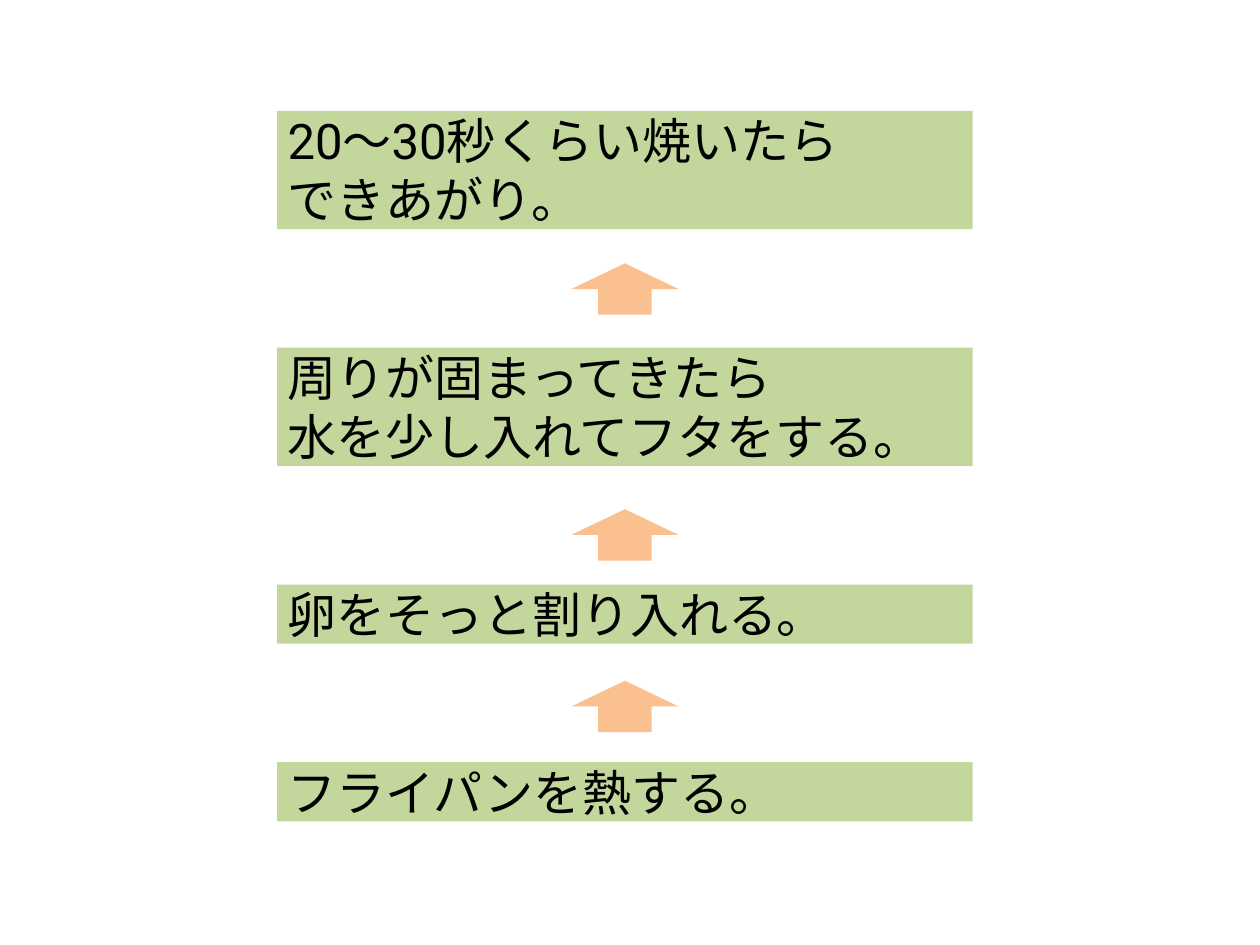
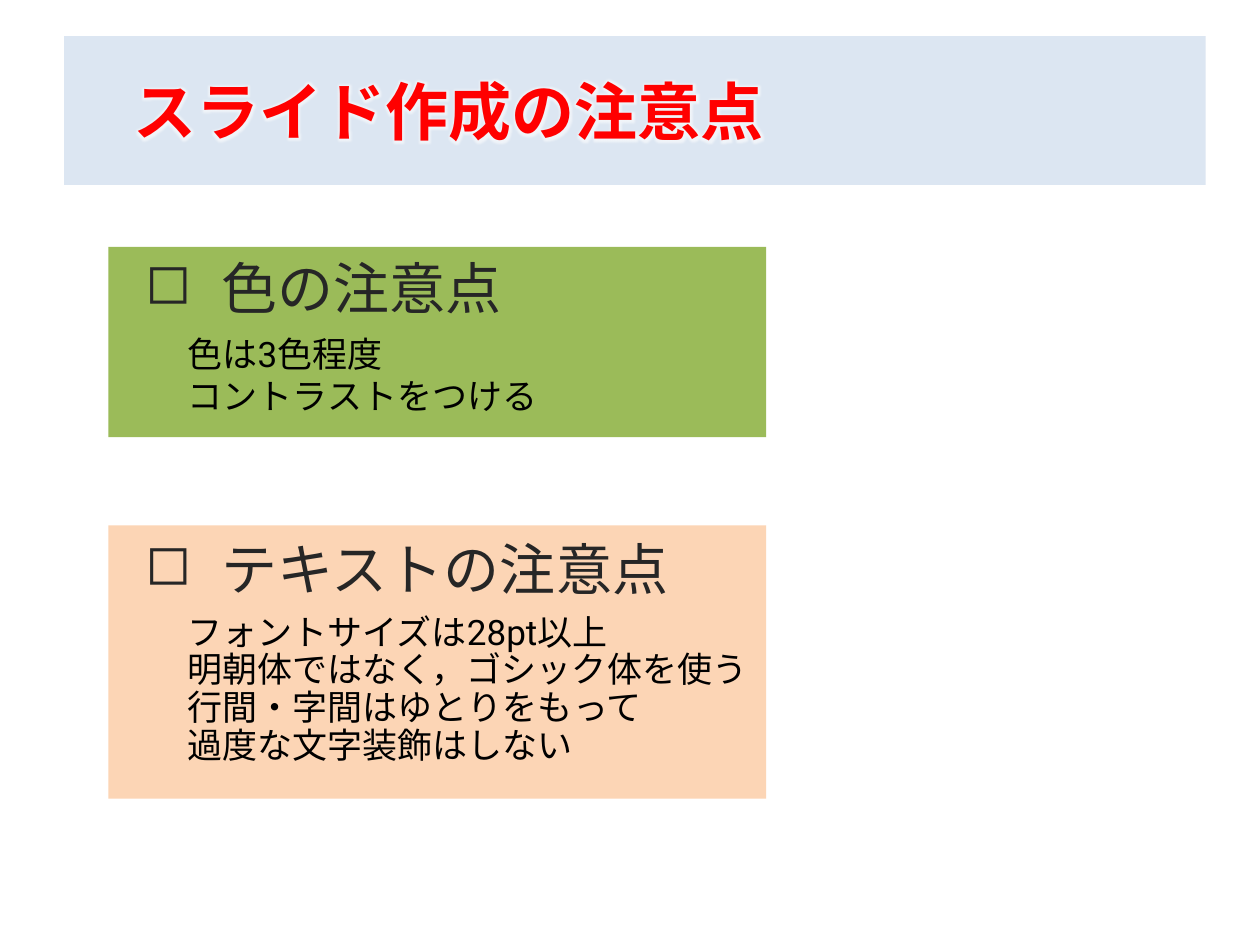
"""Build two slides: a bottom-up cooking flow and a page of slide design advice."""
from dataclasses import dataclass

from lxml import etree
from pptx import Presentation
from pptx import util as u
from pptx.dml.color import RGBColor
from pptx.enum import lang, shapes, text
from pptx.oxml import ns

BODY_FONT, HEADING_FONT = "Roboto", "Noto Sans CJK JP"
BLACK, CHARCOAL, RED, WHITE = "000000", "262626", "FF0000", "FFFFFF"
PALE_GREEN, GREEN = "C3D69B", "9BBB59"
ORANGE, PEACH, PALE_BLUE = "FAC090", "FCD5B5", "DCE6F2"

STEP_LEFT, STEP_WIDTH, STEP_LINE, STEPS_BOTTOM = 158.4, 397.4, 33.84, 469.4
STEP_GAP = 2 * STEP_LINE
STEPS = (
    ("フライパンを熱する。",),
    ("卵をそっと割り入れる。",),
    ("周りが固まってきたら", "水を少し入れてフタをする。"),
    ("20〜30秒くらい焼いたら", "できあがり。"),
)
ARROW_WIDTH, ARROW_HEIGHT = 61.2, 29.3
ARROW_TOPS = (150.5, 291, 389)
PANEL_LEFT, PANEL_WIDTH = 62, 375.8
HEADING_LEFT, HEADING_WIDTH, HEADING_HEIGHT = 76.3, 320.4, 46
LIST_LEFT, HEADING_INDENT = 100, 36


@dataclass(frozen=True)
class Box:
    """A place on the slide, in points."""
    left: float
    top: float
    width: float
    height: float

    def lengths(self) -> tuple:
        """Return the four lengths that python-pptx expects."""
        return tuple(u.Pt(n) for n in (self.left, self.top, self.width, self.height))


@dataclass(frozen=True)
class Style:
    """The look of a block of text."""
    size: float
    font: str = BODY_FONT
    colour: str = BLACK
    bold: bool = False
    spacing: float | None = None
    bullet: str = ""
    glow: str = ""


@dataclass(frozen=True)
class Advice:
    """A coloured panel with its heading and list."""
    panel: Box
    fill: str
    heading: str
    heading_top: float
    list_box: Box
    lines: tuple[str, ...]
    spacing: float | None = None


STEP_STYLE = Style(28)
TITLE_STYLE = Style(36, HEADING_FONT, RED, bold=True, glow=WHITE)
HEADING_STYLE = Style(32, HEADING_FONT, CHARCOAL, bullet="◻")
ADVICE = (
    Advice(Box(PANEL_LEFT, 141.1, PANEL_WIDTH, 108.7), GREEN, " 色の注意点", 141.1,
           Box(LIST_LEFT, 186.5, 216.7, 55.4),
           ("色は3色程度", "コントラストをつける")),
    Advice(Box(PANEL_LEFT, 300.2, PANEL_WIDTH, 156.2), PEACH, " テキストの注意点", 301.7,
           Box(LIST_LEFT, 347.8, 337.7, 95),
           ("フォントサイズは28pt以上", "明朝体ではなく，ゴシック体を使う",
            "行間・字間はゆとりをもって", "過度な文字装飾はしない"), 0.9),
)


def rgb(colour: str) -> RGBColor:
    """Turn a hex string into a colour."""
    return RGBColor.from_string(colour)


def add_filled(slide, kind, box: Box, fill: str):
    """Add a flat preset shape without outline or shadow."""
    shape = slide.shapes.add_shape(kind, *box.lengths())
    shape.shadow.inherit = False
    shape.fill.solid()
    shape.fill.fore_color.rgb = rgb(fill)
    shape.line.fill.background()
    return shape


def add_bullet(paragraph, character: str) -> None:
    """Give a paragraph a hanging bullet."""
    properties = paragraph._p.get_or_add_pPr()
    indent = u.Pt(HEADING_INDENT)
    properties.set("marL", str(indent))
    properties.set("indent", str(-indent))
    etree.SubElement(properties, ns.qn("a:buChar"), char=character)


def add_glow(run, colour: str) -> None:
    """Put a soft glow behind a run that already has a fill."""
    effects = etree.Element(ns.qn("a:effectLst"))
    glow = etree.SubElement(effects, ns.qn("a:glow"), rad=str(u.Pt(5)))
    shade = etree.SubElement(glow, ns.qn("a:srgbClr"), val=colour)
    etree.SubElement(shade, ns.qn("a:alpha"), val="60000")
    run._r.get_or_add_rPr().find(ns.qn("a:solidFill")).addnext(effects)


def write_lines(shape, lines: tuple[str, ...], style: Style,
                insets: tuple = (7.2, 3.6, 7.2, 3.6), middle: bool = False,
                grow: bool = True, wrap: bool = True) -> None:
    """Write one left-aligned paragraph per line."""
    frame = shape.text_frame
    frame.word_wrap = wrap
    frame.auto_size = (text.MSO_AUTO_SIZE.SHAPE_TO_FIT_TEXT if grow
                       else text.MSO_AUTO_SIZE.NONE)
    frame.vertical_anchor = text.MSO_ANCHOR.MIDDLE if middle else text.MSO_ANCHOR.TOP
    (frame.margin_left, frame.margin_top,
     frame.margin_right, frame.margin_bottom) = (u.Pt(inset) for inset in insets)
    for index, line in enumerate(lines):
        paragraph = frame.add_paragraph() if index else frame.paragraphs[0]
        paragraph.alignment = text.PP_ALIGN.LEFT
        paragraph.line_spacing = style.spacing
        if style.bullet:
            add_bullet(paragraph, style.bullet)
        run = paragraph.add_run()
        run.text = line
        font = run.font
        font.size, font.bold, font.name = u.Pt(style.size), style.bold, style.font
        font.language_id = lang.MSO_LANGUAGE_ID.JAPANESE
        font.color.rgb = rgb(style.colour)
        latin = run._r.get_or_add_rPr().find(ns.qn("a:latin"))
        east_asian = etree.Element(ns.qn("a:ea"), typeface=style.font)
        latin.addnext(east_asian)
        if style.glow:
            add_glow(run, style.glow)


def add_blank_slide(presentation):
    """Add a blank white slide."""
    slide = presentation.slides.add_slide(presentation.slide_layouts[6])
    slide.background.fill.solid()
    slide.background.fill.fore_color.rgb = rgb(WHITE)
    return slide


def build_cooking_flow(presentation) -> None:
    """Stack the cooking steps upwards and set arrows between them."""
    slide = add_blank_slide(presentation)
    bottom = STEPS_BOTTOM
    for lines in STEPS:
        height = STEP_LINE * len(lines)
        box = Box(STEP_LEFT, bottom - height, STEP_WIDTH, height)
        step = add_filled(slide, shapes.MSO_SHAPE.RECTANGLE, box, PALE_GREEN)
        write_lines(step, lines, STEP_STYLE, insets=(6, 0, 6, 0))
        bottom -= height + STEP_GAP
    arrow_left = STEP_LEFT + (STEP_WIDTH - ARROW_WIDTH) / 2
    for top in ARROW_TOPS:
        box = Box(arrow_left, top, ARROW_WIDTH, ARROW_HEIGHT)
        arrow = add_filled(slide, shapes.MSO_SHAPE.DOWN_ARROW, box, ORANGE)
        arrow.rotation = 180


def build_design_advice(presentation) -> None:
    """Draw the title band and the advice panels."""
    slide = add_blank_slide(presentation)
    for advice in ADVICE:
        add_filled(slide, shapes.MSO_SHAPE.RECTANGLE, advice.panel, advice.fill)
    title = add_filled(slide, shapes.MSO_SHAPE.RECTANGLE,
                       Box(36.7, 20.7, 652.3, 85), PALE_BLUE)
    write_lines(title, ("スライド作成の注意点",), TITLE_STYLE,
                insets=(39.6, 3.6, 7.2, 3.6), middle=True, grow=False)
    for advice in ADVICE:
        box = Box(HEADING_LEFT, advice.heading_top, HEADING_WIDTH, HEADING_HEIGHT)
        heading = slide.shapes.add_textbox(*box.lengths())
        write_lines(heading, (advice.heading,), HEADING_STYLE)
        points = slide.shapes.add_textbox(*advice.list_box.lengths())
        write_lines(points, advice.lines, Style(20, spacing=advice.spacing), wrap=False)


def main() -> None:
    """Build and save the presentation."""
    presentation = Presentation()
    presentation.slide_width, presentation.slide_height = u.Pt(720), u.Pt(540)
    build_cooking_flow(presentation)
    build_design_advice(presentation)
    presentation.save("out.pptx")


if __name__ == "__main__":
    main()
